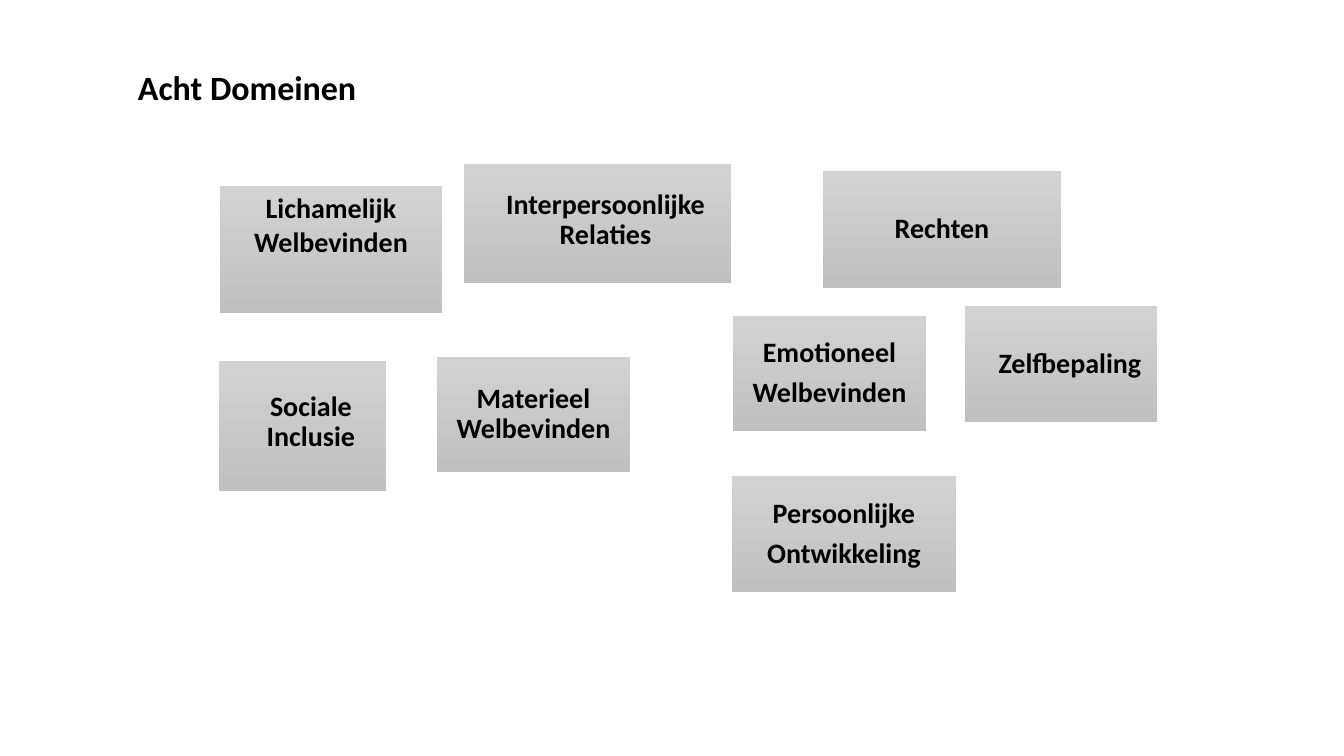
from dataclasses import dataclass

from pptx import Presentation
from pptx.dml.color import RGBColor
from pptx.enum.shapes import MSO_SHAPE
from pptx.enum.text import MSO_ANCHOR as ANCHOR, MSO_AUTO_SIZE, PP_ALIGN as ALIGN
from pptx.slide import Slide
from pptx.text.text import TextFrame
from pptx.util import Emu, Pt

EMU_PER_PX = 9071.43
FONT = "Calibri"
COLORS = {
    "text": "000000",
    "box_top": "D2D2D2",
    "box_bottom": "C0C0C0",
}


@dataclass(frozen=True)
class Domain:
    paragraphs: tuple[str, ...]
    left: int
    top: int
    width: int
    height: int
    insets: tuple[int, int, int, int] = (10, 10, 10, 10)
    anchor: ANCHOR = ANCHOR.MIDDLE
    line_spacing: float = 0.9
    space_after: int = 7


DOMAINS = (
    Domain(("Materieel Welbevinden",), 437, 357, 193, 115),
    Domain(("Lichamelijk Welbevinden",), 220, 186, 222, 127,
           insets=(10, 5, 10, 5), anchor=ANCHOR.TOP, line_spacing=1.0, space_after=0),
    Domain(("Rechten",), 823, 171, 238, 117),
    Domain(("Interpersoonlijke Relaties",), 464, 164, 267, 119, insets=(22, 19, 6, 25)),
    Domain(("Sociale Inclusie",), 219, 361, 167, 130, insets=(27, 10, 10, 17)),
    Domain(("Persoonlijke", "Ontwikkeling"), 732, 476, 224, 116),
    Domain(("Emotioneel", "Welbevinden"), 733, 316, 193, 115),
    Domain(("Zelfbepaling",), 965, 306, 192, 116, insets=(28, 10, 10, 10)),
)


def px(value: int) -> Emu:
    return Emu(round(value * EMU_PER_PX))


def color(name: str) -> RGBColor:
    return RGBColor.from_string(COLORS[name])


def set_text(tf: TextFrame, paragraphs: tuple[str, ...], *, size: float = 20,
             align: ALIGN = ALIGN.CENTER, anchor: ANCHOR = ANCHOR.MIDDLE,
             insets: tuple[int, int, int, int] = (10, 10, 10, 10),
             line_spacing: float = 0.9, space_after: int = 0) -> None:
    tf.word_wrap = True
    tf.auto_size = MSO_AUTO_SIZE.NONE
    tf.vertical_anchor = anchor
    tf.margin_left, tf.margin_top, tf.margin_right, tf.margin_bottom = map(px, insets)
    for i, text in enumerate(paragraphs):
        p = tf.paragraphs[0] if i == 0 else tf.add_paragraph()
        p.alignment = align
        p.line_spacing = line_spacing
        p.space_before = Pt(0)
        p.space_after = Pt(space_after)
        r = p.add_run()
        r.text = text
        r.font.name = FONT
        r.font.size = Pt(size)
        r.font.bold = True
        r.font.color.rgb = color("text")


def add_title(s: Slide) -> None:
    sp = s.shapes.title
    sp.left, sp.top, sp.width, sp.height = map(px, (127, 19, 889, 148))
    set_text(sp.text_frame, ("Acht Domeinen",), size=24.3, align=ALIGN.LEFT,
             insets=(11, 5, 10, 11))


def add_domain(s: Slide, domain: Domain) -> None:
    sp = s.shapes.add_shape(MSO_SHAPE.RECTANGLE, px(domain.left), px(domain.top),
                            px(domain.width), px(domain.height))
    sp.shadow.inherit = False
    sp.line.fill.background()
    sp.fill.gradient()
    sp.fill.gradient_angle = 270
    for stop, position, name in zip(sp.fill.gradient_stops, (0, 1), ("box_top", "box_bottom")):
        stop.position = position
        stop.color.rgb = color(name)
    set_text(sp.text_frame, domain.paragraphs, anchor=domain.anchor, insets=domain.insets,
             line_spacing=domain.line_spacing, space_after=domain.space_after)


def main() -> None:
    prs = Presentation()
    prs.slide_width, prs.slide_height = px(1344), px(756)
    s = prs.slides.add_slide(prs.slide_layouts.get_by_name("Title Only"))
    add_title(s)
    for domain in DOMAINS:
        add_domain(s, domain)
    prs.save("out.pptx")


if __name__ == "__main__":
    main()
